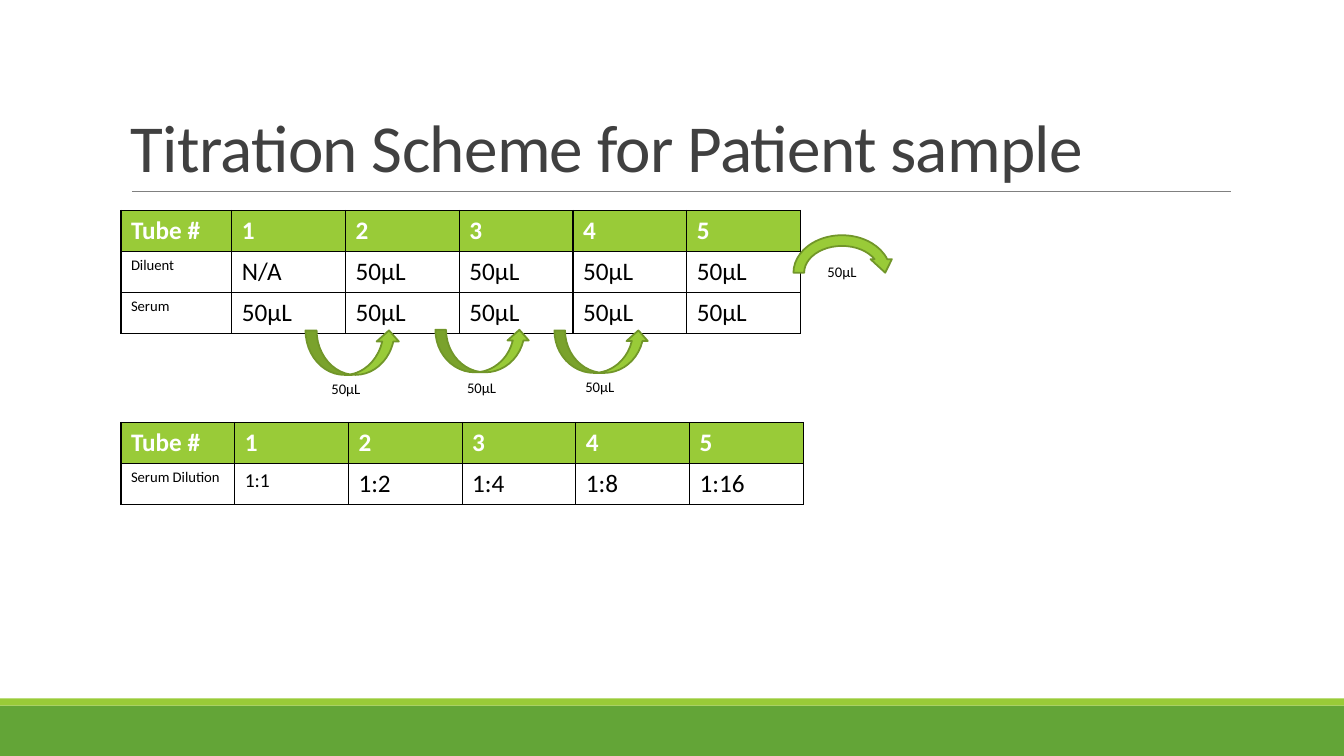
from lxml import etree
from pptx import Presentation
from pptx.dml.color import RGBColor
from pptx.enum import shapes, text
from pptx.oxml import parse_xml
from pptx.oxml.ns import qn
from pptx.util import Pt

LIME = RGBColor(0x99, 0xCB, 0x38)
GREEN = RGBColor(0x63, 0xA5, 0x37)
OLIVE = RGBColor(0x71, 0x96, 0x29)
GRAY = RGBColor(0x80, 0x80, 0x80)
CHARCOAL = RGBColor(0x40, 0x40, 0x40)
BLACK = RGBColor(0, 0, 0)
WHITE = RGBColor(0xFF, 0xFF, 0xFF)

SMALL, LARGE = 10.5, 18
ROW_HEIGHT = 29.2
COLUMN_WIDTH = 81.25
TABLE_LEFT = 86.4
BORDER = (
    '<a:{side} xmlns:a="http://schemas.openxmlformats.org/drawingml/2006/main" w="12700">'
    '<a:solidFill><a:srgbClr val="000000"/></a:solidFill></a:{side}>'
)


def write(frame, words, size=LARGE, color=BLACK, bold=False):
    para = frame.paragraphs[0]
    span = para.add_run()
    span.text = words
    span.font.name = "Calibri"
    span.font.size = Pt(size)
    span.font.color.rgb = color
    span.font.bold = bold
    return para


def add_filled(kind, left, top, width, height, fill, line=None):
    """Add a preset shape without shadow, outlined only if a line colour is given."""
    shape = page.shapes.add_shape(kind, Pt(left), Pt(top), Pt(width), Pt(height))
    shape.shadow.inherit = False
    shape.fill.solid()
    shape.fill.fore_color.rgb = fill
    if line is None:
        shape.line.fill.background()
    else:
        shape.line.color.rgb = line
        shape.line.width = Pt(1.25)


deck = Presentation()
deck.slide_width, deck.slide_height = Pt(960), Pt(540)
page = deck.slides.add_slide(deck.slide_layouts[6])

# Footer bands and title rule
add_filled(shapes.MSO_SHAPE.RECTANGLE, 0, 504, 960, 36, GREEN)
add_filled(shapes.MSO_SHAPE.RECTANGLE, 0, 498.8, 960, 5.2, LIME)
rule = page.shapes.add_connector(
    shapes.MSO_CONNECTOR.STRAIGHT, Pt(94.2), Pt(136.8), Pt(879), Pt(136.8))
rule.line.color.rgb = GRAY
rule.line.width = Pt(0.5)
etree.SubElement(rule._element.spPr, qn("a:effectLst"))

# Title
title = page.shapes.add_textbox(Pt(86.4), Pt(22.6), Pt(792), Pt(114.2))
title.text_frame.word_wrap = True
title.text_frame.vertical_anchor = text.MSO_ANCHOR.BOTTOM
heading = write(title.text_frame, "Titration Scheme for Patient sample", size=48, color=CHARCOAL)
heading.line_spacing = 0.85
heading.runs[0].font._element.set("spc", "-50")

# Tables: top, first column width, rows
HEADER = ["Tube #", "1", "2", "3", "4", "5"]
TABLES = [
    (150.4, 79.25, [HEADER,
                    ["Diluent", "N/A"] + ["50µL"] * 4,
                    ["Serum"] + ["50µL"] * 5]),
    (301.8, COLUMN_WIDTH, [HEADER,
                           ["Serum Dilution", "1:1", "1:2", "1:4", "1:8", "1:16"]]),
]
for top, first_width, rows in TABLES:
    widths = [first_width] + [COLUMN_WIDTH] * 5
    table = page.shapes.add_table(
        len(rows), len(widths), Pt(TABLE_LEFT), Pt(top),
        Pt(sum(widths)), Pt(ROW_HEIGHT * len(rows))).table
    for column, width in zip(table.columns, widths):
        column.width = Pt(width)
    for r, row in enumerate(rows):
        table.rows[r].height = Pt(ROW_HEIGHT)
        for c, words in enumerate(row):
            cell = table.cell(r, c)
            for side in ("lnL", "lnR", "lnT", "lnB"):
                cell._tc.get_or_add_tcPr().append(parse_xml(BORDER.format(side=side)))
            cell.fill.solid()
            cell.fill.fore_color.rgb = WHITE if r else LIME
            size = LARGE
            if r and c == 0:
                size = SMALL
            elif words == "1:1":
                size = 14
            write(cell.text_frame, words, size=size, color=BLACK if r else WHITE, bold=r == 0)

# Transfer arrows
for left, top, height in [(218.2, 236, 31.8), (311, 235.6, 30.4), (396, 236, 30.4)]:
    add_filled(shapes.MSO_SHAPE.CURVED_UP_ARROW, left, top, 67.6, height, LIME, line=OLIVE)
add_filled(shapes.MSO_SHAPE.CIRCULAR_ARROW, 563, 164.2, 77, 61.2, LIME, line=OLIVE)

# Transfer volumes
for left, top in [(229.7, 268), (326.6, 267.2), (411, 266.4), (584, 184.3)]:
    label = page.shapes.add_textbox(Pt(left), Pt(top), Pt(43.2), Pt(20))
    label.text_frame.word_wrap = True
    label.text_frame.auto_size = text.MSO_AUTO_SIZE.SHAPE_TO_FIT_TEXT
    write(label.text_frame, "50µL", size=SMALL)

deck.save("out.pptx")
